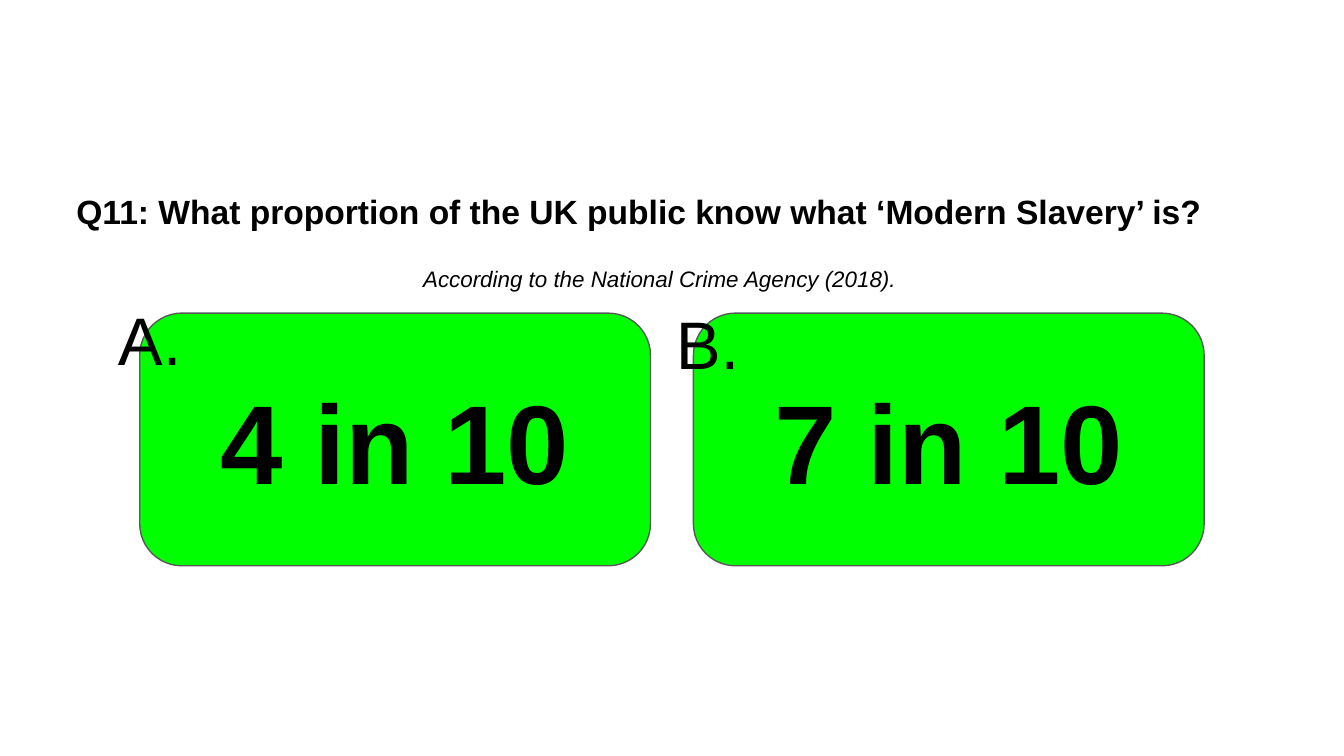
"""Build a quiz slide with one question and two answer cards."""
import pptx
import pptx.dml.color
import pptx.enum.shapes
import pptx.enum.text
import pptx.util

WIDTH = 10
HEIGHT = WIDTH * 9 / 16
CARD_LEFT, CARD_TOP, CARD_WIDTH, CARD_HEIGHT = 1.04, 2.33, 3.8, 1.88
COLUMN_STEP = 4.12


def color(hex_string):
    """Return the colour for a hex string."""
    return pptx.dml.color.RGBColor.from_string(hex_string)


def inches(*lengths):
    """Convert lengths in inches to slide units."""
    return [pptx.util.Inches(length) for length in lengths]


def write_text(shape, text, size, bold=False, italic=False):
    """Write one run of black Arial text and set the insets."""
    frame = shape.text_frame
    frame.word_wrap = True
    frame.margin_left = frame.margin_right = pptx.util.Inches(0.1)
    frame.margin_top = frame.margin_bottom = pptx.util.Inches(0.1)
    paragraph = frame.paragraphs[0]
    run = paragraph.add_run()
    run.text = text
    run.font.name = "Arial"
    run.font.size = pptx.util.Pt(size)
    run.font.bold = bold
    run.font.italic = italic
    run.font.color.rgb = color("000000")
    return paragraph


def add_label(slide, box, text, size, **style):
    """Add a left-aligned text box."""
    shape = slide.shapes.add_textbox(*inches(*box))
    write_text(shape, text, size, **style)


def add_answer_card(slide, column, answer):
    """Add a rounded green card with its answer in the given column."""
    left = CARD_LEFT + column * COLUMN_STEP
    shape = slide.shapes.add_shape(
        pptx.enum.shapes.MSO_SHAPE.ROUNDED_RECTANGLE,
        *inches(left, CARD_TOP, CARD_WIDTH, CARD_HEIGHT),
    )
    shape.shadow.inherit = False
    shape.fill.solid()
    shape.fill.fore_color.rgb = color("00FF00")
    shape.line.color.rgb = color("595959")
    shape.line.width = pptx.util.Pt(0.75)
    shape.text_frame.vertical_anchor = pptx.enum.text.MSO_ANCHOR.MIDDLE
    paragraph = write_text(shape, answer, 60, bold=True)
    paragraph.alignment = pptx.enum.text.PP_ALIGN.CENTER


def main():
    """Build and save the slide."""
    presentation = pptx.Presentation()
    presentation.slide_width, presentation.slide_height = inches(WIDTH, HEIGHT)
    slide = presentation.slides.add_slide(presentation.slide_layouts[6])
    add_label(slide, (0.47, 1.32, 8.8, 0.53),
              "Q11: What proportion of the UK public know what ‘Modern Slavery’ is?",
              18, bold=True)
    for column, answer in enumerate(("4 in 10", "7 in 10")):
        add_answer_card(slide, column, answer)
    add_label(slide, (3.05, 1.87, 3.94, 0.46),
              "According to the National Crime Agency (2018).", 12, italic=True)
    add_label(slide, (0.78, 2.12, 0.96, 0.79), "A.", 36)
    add_label(slide, (4.93, 2.15, 0.72, 0.72), "B.", 36)
    presentation.save("out.pptx")


if __name__ == "__main__":
    main()
